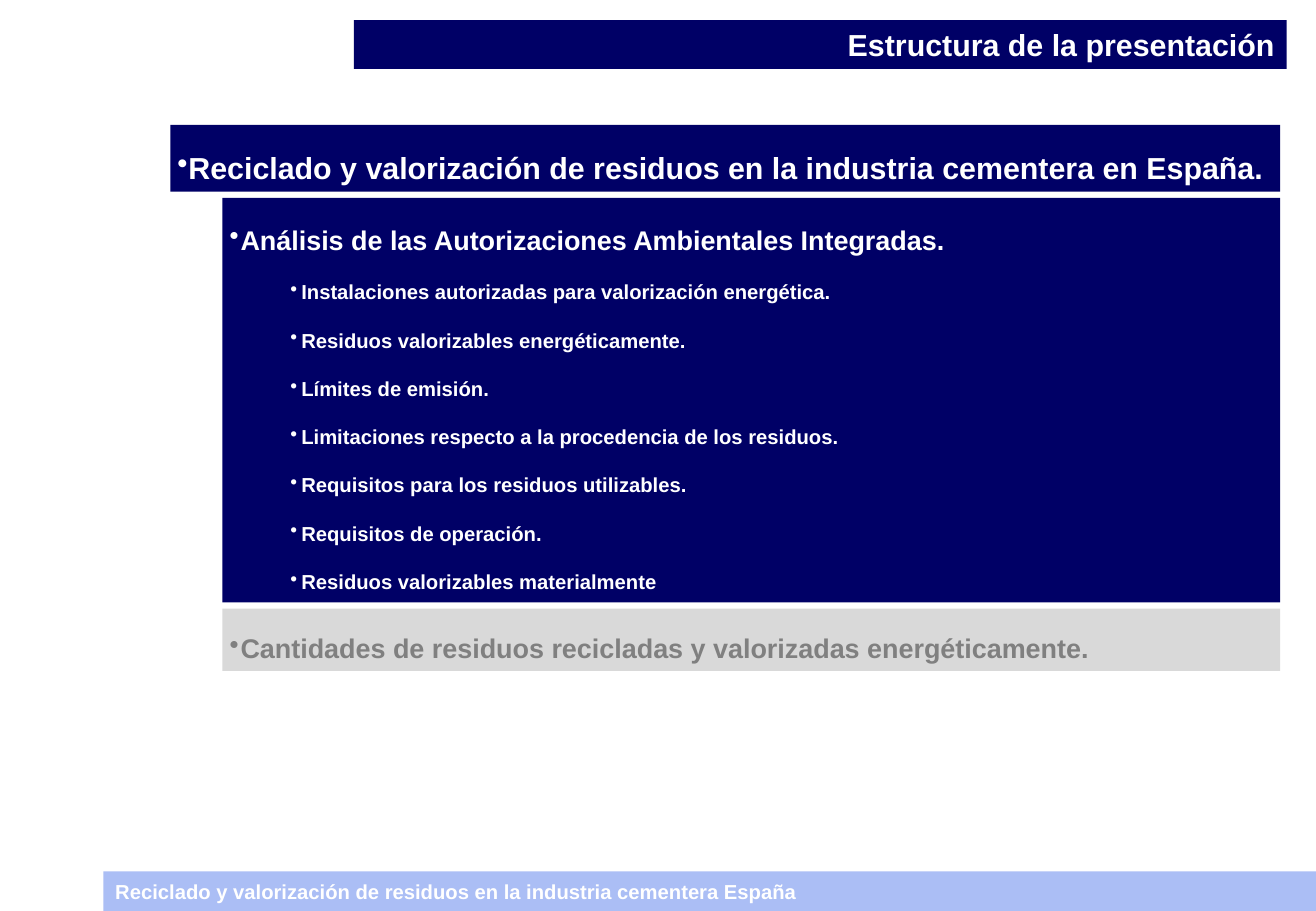
from lxml.etree import SubElement
from pptx import Presentation
from pptx.dml.color import RGBColor
from pptx.enum.shapes import MSO_SHAPE
from pptx.enum.text import MSO_ANCHOR, PP_ALIGN
from pptx.oxml.ns import qn
from pptx.util import Cm, Pt

COLORS = {
    "navy": "000066",
    "sky": "ABBEF5",
    "pale": "D9D9D9",
    "gray": "808080",
    "white": "FFFFFF",
}
WIDE, HIGH = 27.51, 19.05
EDGE = 26.76
HANG = 0.23
TOPICS = [
    "Instalaciones autorizadas para valorización energética.",
    "Residuos valorizables energéticamente.",
    "Límites de emisión.",
    "Limitaciones respecto a la procedencia de los residuos.",
    "Requisitos para los residuos utilizables.",
    "Requisitos de operación.",
    "Residuos valorizables materialmente",
]


def tint(name):
    return RGBColor.from_string(COLORS[name])


def add_bar(slide, left, top, width, height, fill, side=0.25):
    bar = slide.shapes.add_shape(
        MSO_SHAPE.RECTANGLE, Cm(left), Cm(top), Cm(width), Cm(height))
    bar.shadow.inherit = False
    bar.fill.solid()
    bar.fill.fore_color.rgb = tint(fill)
    bar.line.fill.background()
    frame = bar.text_frame
    frame.word_wrap = True
    frame.vertical_anchor = MSO_ANCHOR.MIDDLE
    frame.margin_left = frame.margin_right = Cm(side)
    frame.margin_top = frame.margin_bottom = Cm(0.13)
    return frame


def add_text(para, text, size, color, align):
    para.alignment = align
    run = para.add_run()
    run.text = text
    run.font.name = "Arial"
    run.font.size = Pt(size)
    run.font.bold = True
    run.font.color.rgb = tint(color)


def add_point(para, text, size, color, level=0):
    para.level = level
    props = para._p.get_or_add_pPr()
    props.set("marL", str(Cm(1.5 if level else HANG)))
    props.set("indent", str(-Cm(HANG)))
    SubElement(props, qn("a:buChar"), char="•")
    para.line_spacing = 1.5
    add_text(para, text, size, color, PP_ALIGN.JUSTIFY)


def add_block(slide, left, top, height, fill, color, head, size, items=()):
    frame = add_bar(slide, left, top, EDGE - left, height, fill, 0.15)
    add_point(frame.paragraphs[0], head, size, color)
    for item in items:
        para = frame.add_paragraph()
        add_point(para, item, 12, color, 1)
        para.space_before = Pt(7)


def main():
    deck = Presentation()
    deck.slide_width, deck.slide_height = Cm(WIDE), Cm(HIGH)
    slide = deck.slides.add_slide(deck.slide_layouts[6])

    foot = add_bar(slide, 2.16, 18.22, WIDE - 2.16, HIGH - 18.22, "sky")
    add_text(foot.paragraphs[0],
             "Reciclado y valorización de residuos en la industria cementera España",
             12, "white", PP_ALIGN.LEFT)
    title = add_bar(slide, 7.4, 0.42, 19.5, 1.02, "navy")
    title.vertical_anchor = MSO_ANCHOR.TOP
    add_text(title.paragraphs[0], "Estructura de la presentación",
             18, "white", PP_ALIGN.RIGHT)

    add_block(slide, 3.56, 2.61, 1.4, "navy", "white",
              "Reciclado y valorización de residuos en la industria cementera en España.", 18)
    add_block(slide, 4.65, 4.14, 8.46, "navy", "white",
              "Análisis de las Autorizaciones Ambientales Integradas.", 16, TOPICS)
    add_block(slide, 4.65, 12.73, 1.3, "pale", "gray",
              "Cantidades de residuos recicladas y valorizadas energéticamente.", 16)
    deck.save("out.pptx")


if __name__ == "__main__":
    main()
